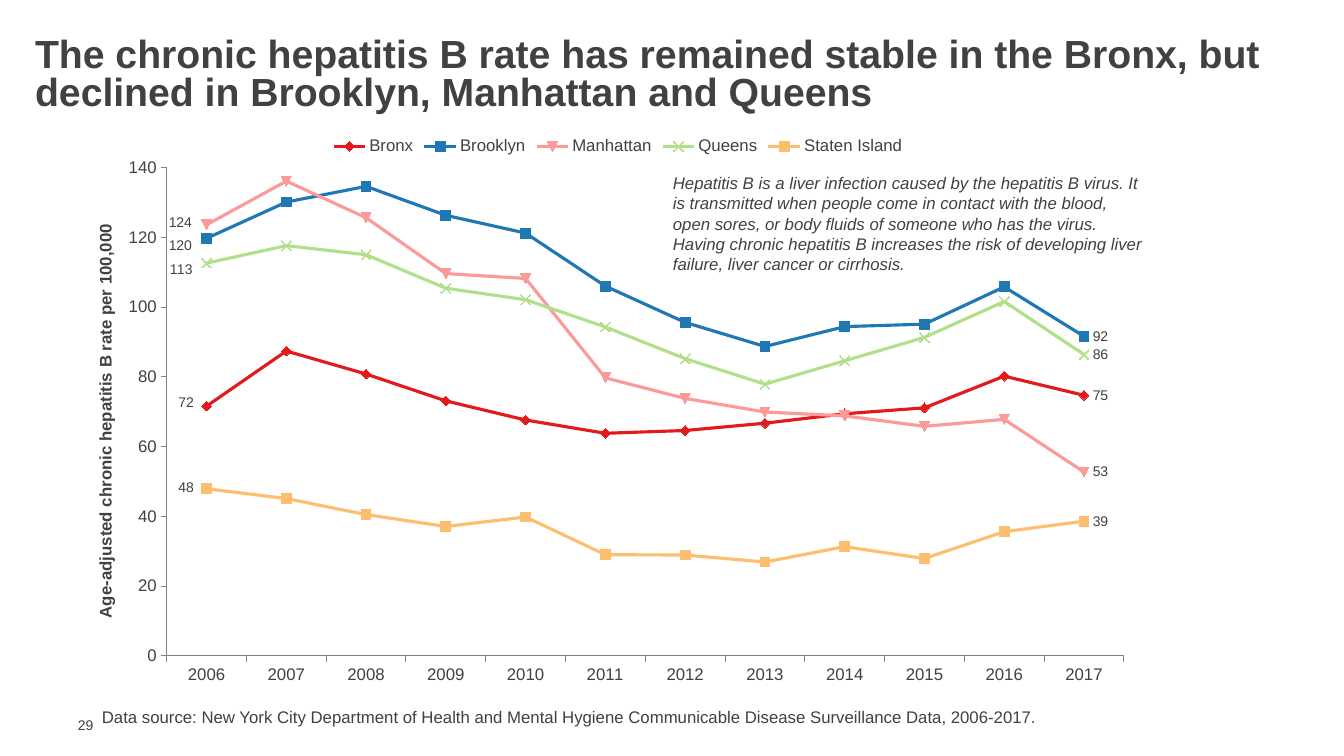
from pptx import Presentation
from pptx.chart.data import CategoryChartData
from pptx.dml.color import RGBColor
from pptx.enum.chart import (XL_CHART_TYPE, XL_LABEL_POSITION,
                             XL_LEGEND_POSITION, XL_MARKER_STYLE, XL_TICK_MARK)
from pptx.enum.text import MSO_ANCHOR, PP_ALIGN
from pptx.oxml import parse_xml
from pptx.oxml.ns import nsdecls, qn
from pptx.util import Emu, Pt

LINES = XL_CHART_TYPE.LINE_MARKERS
LEFT, RIGHT = XL_LABEL_POSITION.LEFT, XL_LABEL_POSITION.RIGHT
TOP = XL_LEGEND_POSITION.TOP
OUT = XL_TICK_MARK.OUTSIDE
DIAMOND, SQUARE, CROSS = (XL_MARKER_STYLE.DIAMOND, XL_MARKER_STYLE.SQUARE,
                          XL_MARKER_STYLE.X)
MIDDLE, ALIGN = MSO_ANCHOR.MIDDLE, PP_ALIGN.LEFT

PX = 12192000 / 1344
INK, GREY = "414042", "808080"

TITLE = ("The chronic hepatitis B rate has remained stable in the Bronx, "
         "but declined in Brooklyn, Manhattan and Queens")
NOTE = ("Hepatitis B is a liver infection caused by the hepatitis B virus. "
        "It is transmitted when people come in contact with the blood, open "
        "sores, or body fluids of someone who has the virus. Having chronic "
        "hepatitis B increases the risk of developing liver failure, liver "
        "cancer or cirrhosis.")
SOURCE = ("Data source: New York City Department of Health and Mental Hygiene "
          "Communicable Disease Surveillance Data, 2006-2017.")
YEARS = [str(year) for year in range(2006, 2018)]

# name, colour, marker (None: automatic), shift of first label in px, rates
RATES = [
    ("Bronx", "E31A1C", DIAMOND, (-4, -3),
     (71.6, 87.4, 80.8, 73.1, 67.6, 63.8, 64.6, 66.7, 69.4, 71.1, 80.2, 74.7)),
    ("Brooklyn", "1F78B4", SQUARE, (-6, 7),
     (119.7, 130.1, 134.6, 126.3, 121.2, 106, 95.6, 88.7, 94.4, 95.1, 105.8,
      91.6)),
    ("Manhattan", "FB9A99", None, (-6, -2),
     (123.6, 136.1, 125.6, 109.6, 108.2, 79.7, 73.8, 69.9, 68.8, 65.8, 67.8,
      52.7)),
    ("Queens", "B2DF8A", CROSS, (-5, 7),
     (112.6, 117.6, 115, 105.4, 102.1, 94.3, 85.2, 77.9, 84.6, 91.3, 101.6,
      86.4)),
    ("Staten Island", "FDBF6F", SQUARE, (-4, -1),
     (47.9, 45.1, 40.5, 37.1, 39.8, 29, 28.9, 26.9, 31.3, 27.9, 35.6, 38.6)),
]
CHART = (92, 126, 1052, 562)


def px(*sizes):
    return [Emu(round(size * PX)) for size in sizes]


def tint(code):
    return RGBColor.from_string(code)


def style(font, size, bold=False, italic=False):
    font.name, font.size = "Arial", Pt(size)
    font.bold, font.italic = bold, italic
    font.color.rgb = tint(INK)


def write(frame, text, size, **look):
    run = frame.paragraphs[0].add_run()
    run.text = text
    style(run.font, size, **look)


def add_text(slide, box, text, size, **look):
    frame = slide.shapes.add_textbox(*px(*box)).text_frame
    frame.word_wrap = True
    write(frame, text, size, **look)
    return frame


def add_title(slide):
    title = slide.shapes.title
    title.left, title.top, title.width, title.height = px(25, 33, 1293, 86)
    frame = title.text_frame
    frame.vertical_anchor = MIDDLE
    frame.paragraphs[0].alignment = ALIGN
    frame.paragraphs[0].line_spacing = 0.8
    write(frame, TITLE, 28, bold=True)


def layout(inner="", **parts):
    """Return a manual chart layout with the given fractions."""
    tags = "".join(f'<c:{tag} val="{val}"/>' for tag, val in parts.items())
    return parse_xml(f'<c:layout {nsdecls("c")}><c:manualLayout>{inner}{tags}'
                     '</c:manualLayout></c:layout>')


def add_label(line, spot, side, shift=None):
    label = line.points[spot].data_label
    style(label.font, 10)
    label.position = side
    idx = line._element.find(f'.//{qn("c:dLbl")}[{qn("c:idx")}][last()]/'
                             + qn("c:idx"))
    idx.addnext(parse_xml(f'<c:numFmt {nsdecls("c")} formatCode="0" '
                          'sourceLinked="0"/>'))
    if shift:
        idx.addnext(layout(x=round(shift[0] / CHART[2], 4),
                           y=round(shift[1] / CHART[3], 4)))


def style_line(line, color, mark, shift):
    line.smooth = False
    line.format.line.width = Pt(2.25)
    line.format.line.color.rgb = tint(color)
    marker = line.marker
    if mark:
        marker.style = mark
    marker.size = 7
    marker.format.fill.solid()
    marker.format.fill.fore_color.rgb = tint(color)
    marker.format.line.color.rgb = tint(color)
    line.data_labels.show_value = False
    add_label(line, 0, LEFT, shift)
    add_label(line, len(YEARS) - 1, RIGHT)


def style_axis(axis):
    axis.has_major_gridlines = False
    axis.major_tick_mark = OUT
    axis.format.line.color.rgb = tint(GREY)
    axis.format.line.width = Pt(0.75)
    style(axis.tick_labels.font, 12)


def place_plot(chart):
    area = chart._chartSpace.find(f'.//{qn("c:plotArea")}')
    for old in area.findall(qn("c:layout")):
        area.remove(old)
    inner = ('<c:layoutTarget val="inner"/><c:xMode val="edge"/>'
             '<c:yMode val="edge"/>')
    area.insert(0, layout(inner, x=0.071, y=0.074, w=0.91, h=0.869))


def add_rates(slide):
    data = CategoryChartData(number_format="0")
    data.categories = YEARS
    for name, _, _, _, rates in RATES:
        data.add_series(name, rates)
    chart = slide.shapes.add_chart(LINES, *px(*CHART), data).chart
    style(chart.font, 10)
    chart.has_title = False
    chart.has_legend = True
    chart.legend.position = TOP
    chart.legend.include_in_layout = False
    style(chart.legend.font, 12)
    chart.plots[0].vary_by_categories = False
    for line, (_, color, mark, shift, _) in zip(chart.series, RATES):
        style_line(line, color, mark, shift)
    style_axis(chart.category_axis)
    axis = chart.value_axis
    style_axis(axis)
    axis.minimum_scale, axis.maximum_scale, axis.major_unit = 0, 140, 20
    axis.tick_labels.number_format = "0"
    axis.tick_labels.number_format_is_linked = False
    frame = axis.axis_title.text_frame
    frame._txBody.bodyPr.set("rot", "-5400000")
    write(frame, "Age-adjusted chronic hepatitis B rate per 100,000", 12,
          bold=True)
    place_plot(chart)


def add_number(slide):
    frame = add_text(slide, (68, 716, 43, 17), "29", 10)
    frame.vertical_anchor = MIDDLE
    frame.margin_top = frame.margin_bottom = frame.margin_right = 0


def main():
    deck = Presentation()
    deck.slide_width, deck.slide_height = px(1344, 756)
    slide = deck.slides.add_slide(deck.slide_layouts[5])
    add_number(slide)
    add_text(slide, (92, 702, 1000, 30), SOURCE, 12)
    add_rates(slide)
    add_title(slide)
    add_text(slide, (663, 168, 496, 112), NOTE, 12, italic=True)
    deck.save("out.pptx")


if __name__ == "__main__":
    main()
